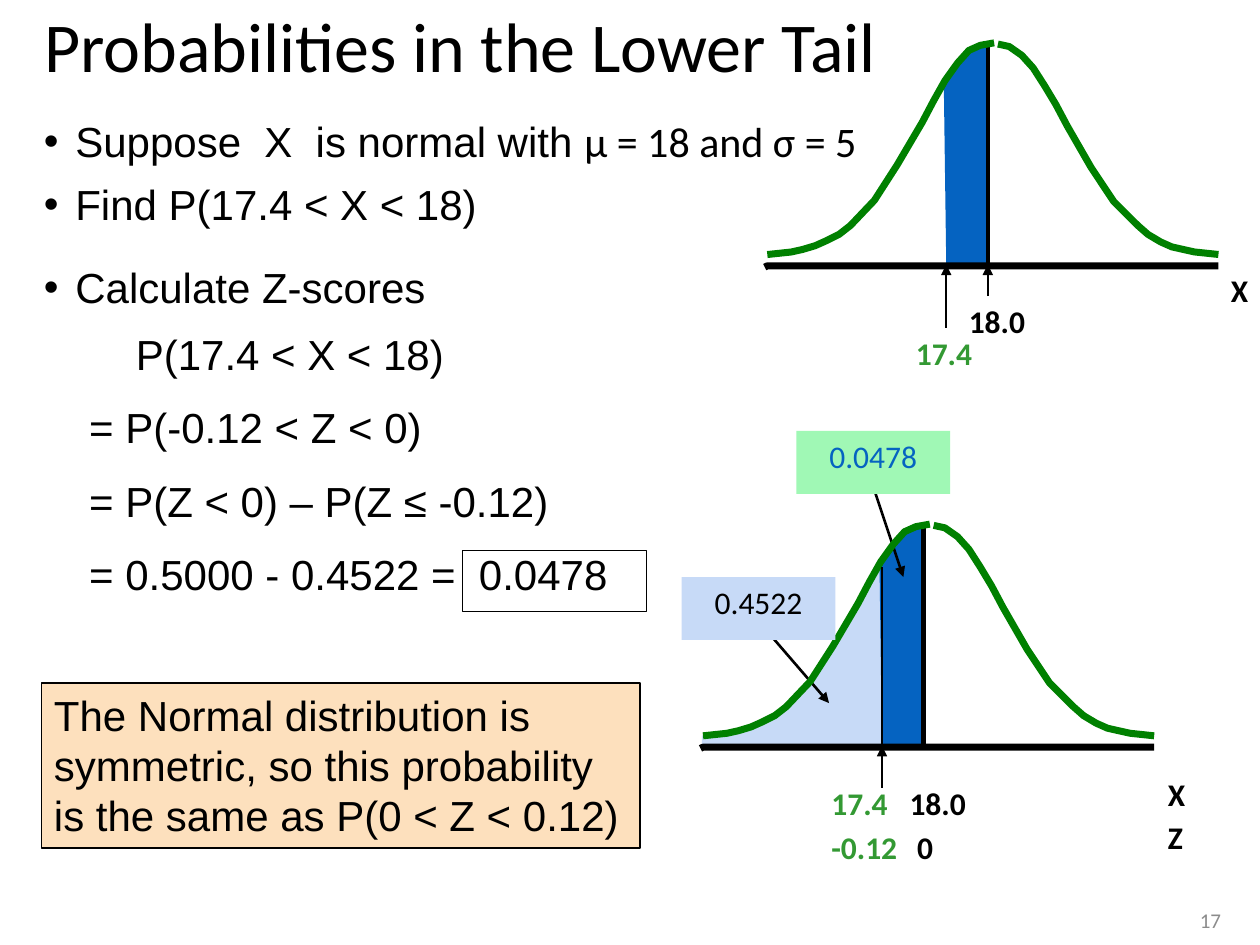
import dataclasses

import lxml.etree
import pptx
import pptx.dml.color
import pptx.enum.shapes
import pptx.enum.text
import pptx.oxml.ns
import pptx.util

Inches = pptx.util.Inches
Pt = pptx.util.Pt
Align = pptx.enum.text.PP_ALIGN
Anchor = pptx.enum.text.MSO_ANCHOR


@dataclasses.dataclass(frozen=True)
class Theme:
    heading: str = "Calibri"
    body: str = "Arial"
    black: str = "000000"
    grey: str = "8C8C8C"
    green: str = "339933"
    curve: str = "008000"
    blue: str = "0563C1"
    pale_blue: str = "C7DAF7"
    mint: str = "A0F8B5"
    peach: str = "FDE0BD"
    title_size: int = 40
    body_size: int = 24
    label_size: int = 18
    number_size: int = 12


THEME = Theme()
BODY = dict(name=THEME.body, size=THEME.body_size)
TITLE = dict(name=THEME.heading, size=THEME.title_size)
LABEL = dict(name=THEME.heading, size=THEME.label_size, bold=True)
GREEN_LABEL = dict(LABEL, color=THEME.green)
CALLOUT = dict(LABEL, bold=False)
NUMBER = dict(name=THEME.heading, size=THEME.number_size, color=THEME.grey)

RIGHT_HALF = [
    (9.67, 2.02), (9.48, 2), (9.39, 1.98), (9.3, 1.96), (9.21, 1.92), (9.11, 1.86),
    (9.03, 1.79), (8.84, 1.6), (8.66, 1.33), (8.47, 1), (8.38, 0.83), (8.29, 0.68),
    (8.2, 0.54), (8.11, 0.44), (8.01, 0.37), (7.92, 0.35),
]
LEFT_HALF = [
    (6.09, 2.02), (6.28, 2), (6.37, 1.98), (6.47, 1.95), (6.56, 1.91), (6.66, 1.86),
    (6.75, 1.79), (6.94, 1.59), (7.12, 1.31), (7.32, 0.97), (7.41, 0.8), (7.5, 0.64),
    (7.6, 0.5), (7.69, 0.4), (7.78, 0.36), (7.89, 0.34),
]
AXIS = [(6.07, 2.12), (6.09, 2.11), (9.67, 2.11)]
BAND = [
    (7.51, 2.1), (7.49, 0.64), (7.54, 0.57), (7.61, 0.48), (7.66, 0.42),
    (7.71, 0.39), (7.76, 0.35), (7.84, 0.35), (7.84, 2.1),
]
LOWER_TAIL = [
    (7.03, 5.92), (7.03, 4.42), (6.94, 4.51), (6.82, 4.75), (6.75, 4.89),
    (6.69, 4.98), (6.6, 5.16), (6.5, 5.31), (6.37, 5.5), (6.25, 5.6),
    (6.09, 5.72), (5.84, 5.8), (5.57, 5.84), (5.57, 5.92),
]
UPPER_PLOT = (0, 0)
LOWER_PLOT = (-0.51, 3.82)


def rgb(value):
    return pptx.dml.color.RGBColor.from_string(value)


def shifted(points, offset):
    return [(x + offset[0], y + offset[1]) for x, y in points]


class SlideBuilder:
    def __init__(self, theme, page):
        self.theme = theme
        self.page = page

    def format_span(self, span, style):
        values = dict(style)
        color = values.pop("color", self.theme.black)
        values["size"] = Pt(values["size"])
        for key, value in values.items():
            setattr(span.font, key, value)
        span.font.color.rgb = rgb(color)

    def set_text(self, box, paragraphs, anchor=Anchor.TOP, align=Align.LEFT, gap=0,
                 line_spacing=1.0, bullets=False, indents=()):
        frame = box.text_frame
        settings = dict(word_wrap=True, auto_size=pptx.enum.text.MSO_AUTO_SIZE.NONE,
                        vertical_anchor=anchor, margin_left=Inches(0.1),
                        margin_right=Inches(0.1), margin_top=Inches(0.05),
                        margin_bottom=Inches(0.05))
        for key, value in settings.items():
            setattr(frame, key, value)
        for index, spans in enumerate(paragraphs):
            para = frame.add_paragraph() if index else frame.paragraphs[0]
            spacing = dict(alignment=align, line_spacing=line_spacing,
                           space_before=Pt(gap if index else 0))
            for key, value in spacing.items():
                setattr(para, key, value)
            for text, style in spans:
                span = para.add_run()
                span.text = text
                self.format_span(span, style)
            properties = para._p.get_or_add_pPr()
            if index < len(indents):
                properties.set("marL", str(Inches(indents[index])))
            if bullets:
                properties.set("marL", str(Inches(0.25)))
                properties.set("indent", str(Inches(-0.25)))
                for tag, key, value in (("a:buFont", "typeface", "Arial"), ("a:buChar", "char", "•")):
                    mark = lxml.etree.SubElement(properties, pptx.oxml.ns.qn(tag))
                    mark.set(key, value)

    def title(self, text, bounds):
        box = self.page.shapes.title
        for key, value in zip(("left", "top", "width", "height"), bounds):
            setattr(box, key, Inches(value))
        self.set_text(box, [[(text, TITLE)]], anchor=Anchor.MIDDLE, line_spacing=0.9)

    def text(self, bounds, paragraphs, **layout):
        box = self.page.shapes.add_textbox(*map(Inches, bounds))
        self.set_text(box, paragraphs, **layout)

    def label(self, left, top, text, style=LABEL, width=0.69):
        self.text((left, top, width, 0.4), [[(text, style)]])

    def paint(self, shape, fill=None, line=None, weight=1):
        shape.shadow.inherit = False
        for part, color in ((shape.fill, fill), (shape.line.fill, line)):
            if color:
                part.solid()
                part.fore_color.rgb = rgb(color)
            else:
                part.background()
        if line:
            shape.line.width = Pt(weight)

    def rectangle(self, bounds, paragraphs=(), align=Align.LEFT, **look):
        kind = pptx.enum.shapes.MSO_SHAPE.RECTANGLE
        box = self.page.shapes.add_shape(kind, *map(Inches, bounds))
        self.paint(box, **look)
        self.set_text(box, paragraphs, align=align)

    def callout(self, left, top, text, fill, color):
        self.rectangle((left, top, 1.22, 0.5), [[(text, dict(CALLOUT, color=color))]],
                       align=Align.CENTER, fill=fill)

    def outline(self, points, closed=False, **look):
        corners = [(Inches(x), Inches(y)) for x, y in points]
        builder = self.page.shapes.build_freeform(*corners[0], scale=1.0)
        builder.add_line_segments(corners[1:], close=closed)
        self.paint(builder.convert_to_shape(), **look)

    def line(self, start, end, weight=1, arrow=False):
        kind = pptx.enum.shapes.MSO_CONNECTOR.STRAIGHT
        connector = self.page.shapes.add_connector(kind, *map(Inches, (*start, *end)))
        connector.line.color.rgb = rgb(self.theme.black)
        connector.line.width = Pt(weight)
        properties = connector._element.spPr
        if arrow:
            head = lxml.etree.SubElement(properties.get_or_add_ln(), pptx.oxml.ns.qn("a:tailEnd"))
            head.set("type", "triangle")
        lxml.etree.SubElement(properties, pptx.oxml.ns.qn("a:effectLst"))

    def band(self, offset):
        self.outline(shifted(BAND, offset), closed=True, fill=self.theme.blue)

    def bell(self, offset):
        self.line(*shifted([(7.84, 0.35), (7.84, 2.1)], offset), weight=2.5)
        for half in (RIGHT_HALF, LEFT_HALF):
            self.outline(shifted(half, offset), line=self.theme.curve, weight=4)
        self.outline(shifted(AXIS, offset), line=self.theme.black, weight=4)


def main():
    deck = pptx.Presentation()
    deck.slide_width, deck.slide_height = Inches(10), Inches(7.5)
    build = SlideBuilder(THEME, deck.slides.add_slide(deck.slide_layouts[5]))

    build.title("Probabilities in the Lower Tail", (0.25, 0, 9.53, 0.79))
    build.text((7.54, 7.1, 2.25, 0.4), [[("17", NUMBER)]], anchor=Anchor.MIDDLE, align=Align.RIGHT)
    build.text((0.25, 0.91, 9.53, 0.99), [
        [("Suppose  X  is normal with ", BODY), ("μ = 18 and σ = 5", dict(BODY, name=THEME.heading))],
        [("Find P(17.4 < X < 18)", BODY)],
    ], gap=10, line_spacing=0.9, bullets=True)

    build.band(UPPER_PLOT)
    build.bell(UPPER_PLOT)
    build.label(9.67, 2.1, "X", width=0.42)
    build.label(7.17, 2.6, "17.4", GREEN_LABEL)
    build.label(7.59, 2.35, "18.0")
    build.line((7.84, 2.35), (7.84, 2.1), arrow=True)
    build.line((7.51, 2.6), (7.51, 2.1), arrow=True)

    build.text((0.25, 2.07, 9.53, 0.99), [[("Calculate Z-scores", BODY)]], line_spacing=0.9, bullets=True)
    steps = ["P(17.4 < X < 18)", "= P(-0.12 < Z < 0)", "= P(Z < 0) – P(Z ≤ -0.12)",
             "= 0.5000 - 0.4522 =  0.0478"]
    build.text((0.61, 2.56, 4.33, 2.32), [[(step, BODY)] for step in steps], gap=13, indents=(0.37,))
    build.rectangle((3.67, 4.37, 1.46, 0.48), line=THEME.black, weight=0.5)

    build.outline(LOWER_TAIL, closed=True, fill=THEME.pale_blue)
    build.line((6.08, 5), (6.58, 5.58), weight=1.5, arrow=True)
    build.band(LOWER_PLOT)
    build.line((6.92, 3.83), (7.17, 4.58), weight=1.5, arrow=True)
    build.bell(LOWER_PLOT)
    build.label(9.17, 6.1, "X", width=0.42)
    build.label(6.5, 6.17, "17.4", GREEN_LABEL)
    build.label(7.12, 6.17, "18.0")
    build.line((7, 6.25), (7, 5.92), arrow=True)
    build.callout(6.32, 3.42, "0.0478", THEME.mint, THEME.blue)
    build.line((7, 4.5), (7, 5.92))
    build.callout(5.41, 4.58, "0.4522", THEME.pale_blue, THEME.black)
    build.label(9.17, 6.44, "Z", width=0.42)
    build.label(6.5, 6.52, "-0.12", GREEN_LABEL, width=0.77)
    build.label(7.18, 6.52, "0", width=0.41)

    note = "The Normal distribution is symmetric, so this probability is the same as P(0 < Z < 0.12)"
    build.rectangle((0.33, 5.42, 4.75, 1.31), [[(note, BODY)]], fill=THEME.peach, line=THEME.black)

    deck.save("out.pptx")


if __name__ == "__main__":
    main()
